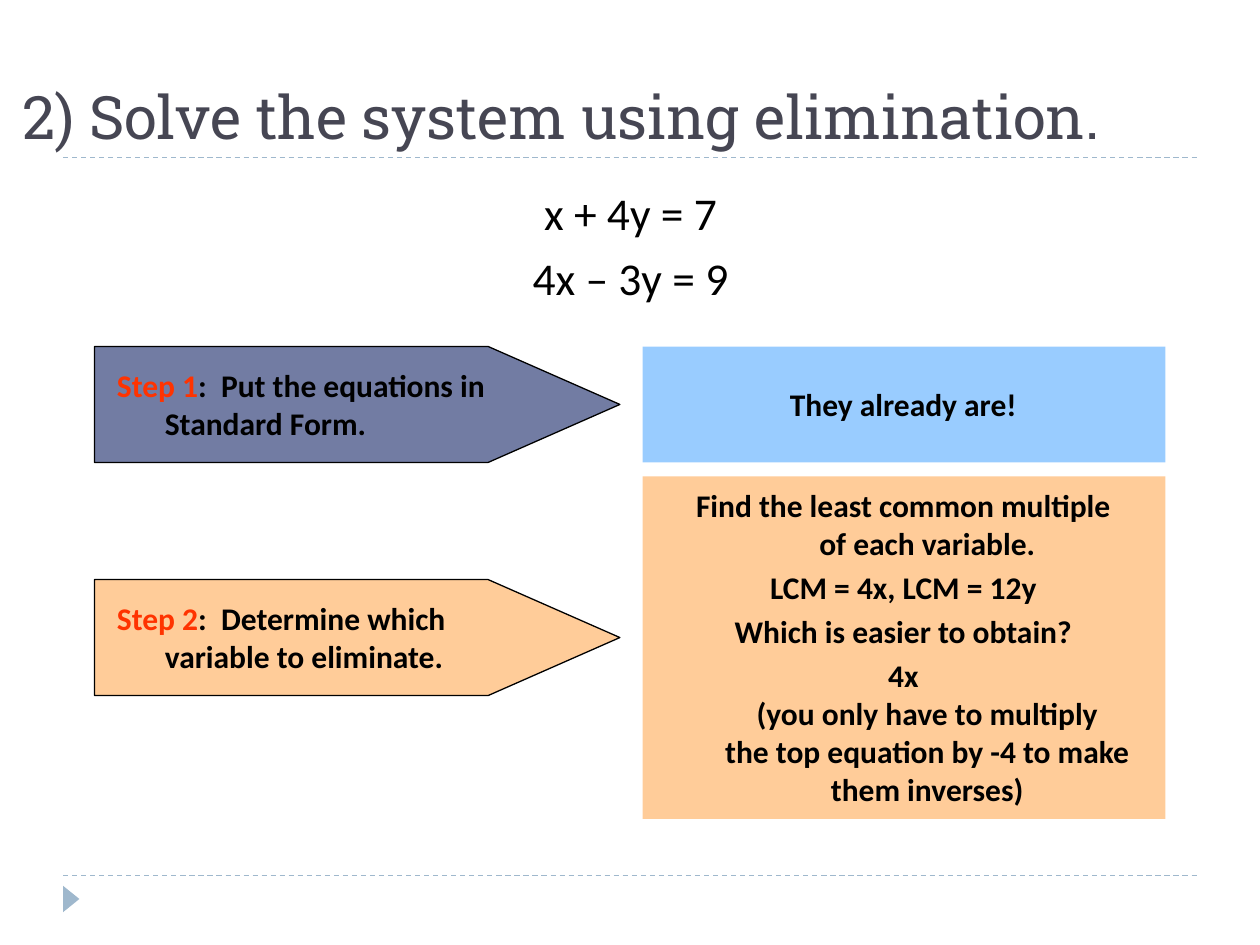
from lxml import etree
from pptx import Presentation
from pptx.dml.color import RGBColor
from pptx.enum.dml import MSO_LINE
from pptx.enum.shapes import MSO_CONNECTOR, MSO_SHAPE
from pptx.enum.text import MSO_ANCHOR, MSO_AUTO_SIZE, PP_ALIGN
from pptx.oxml.ns import qn
from pptx.util import Pt

PX = 9144
STRAIGHT = MSO_CONNECTOR.STRAIGHT
DASH = MSO_LINE.DASH
ARROW, RECTANGLE = MSO_SHAPE.PENTAGON, MSO_SHAPE.RECTANGLE
TRIANGLE = MSO_SHAPE.ISOSCELES_TRIANGLE
LEFT, CENTER = PP_ALIGN.LEFT, PP_ALIGN.CENTER
MIDDLE, BOTTOM = MSO_ANCHOR.MIDDLE, MSO_ANCHOR.BOTTOM
NO_AUTOFIT = MSO_AUTO_SIZE.NONE
BODY_FONT, TITLE_FONT = "Calibri", "Roboto Slab"
COLORS = {
    "rule": "9FB8CD", "title": "464653", "text": "000000", "step": "FF3300",
    "slate": "727CA3", "blue": "99CCFF", "peach": "FFCC99",
}


def emu(*lengths):
    """Turn px lengths into EMU."""
    return [round(length * PX) for length in lengths]


def rgb(name):
    """Look up a named colour."""
    return RGBColor.from_string(COLORS[name])


def move(shape, box):
    """Place a shape in a px box."""
    shape.left, shape.top, shape.width, shape.height = emu(*box)


def add_run(paragraph, text, size, color="text", font=BODY_FONT, bold=False):
    """Add one formatted run."""
    run = paragraph.add_run()
    run.text = text
    run.font.name, run.font.size, run.font.bold = font, Pt(size), bold
    run.font.color.rgb = rgb(color)


def set_hanging(paragraph, indent):
    """Give a paragraph a hanging indent without a bullet."""
    properties = paragraph._p.get_or_add_pPr()
    margin = emu(indent)[0]
    properties.set("marL", str(margin))
    properties.set("indent", str(-margin))
    etree.SubElement(properties, qn("a:buNone"))


def next_paragraph(frame, index, align, space, indent):
    """Return the formatted paragraph at the next position."""
    paragraph = frame.add_paragraph() if index else frame.paragraphs[0]
    paragraph.alignment, paragraph.space_before = align, Pt(space)
    set_hanging(paragraph, indent)
    return paragraph


def add_panel(slide, kind, box, fill, outlined=False):
    """Add a flat filled shape."""
    shape = slide.shapes.add_shape(kind, *emu(*box))
    shape.shadow.inherit = False
    shape.fill.solid()
    shape.fill.fore_color.rgb = rgb(fill)
    if outlined:
        shape.line.color.rgb = rgb("text")
        shape.line.width = Pt(0.75)
    else:
        shape.line.fill.background()
    return shape


def add_label(slide, box, paragraphs, align):
    """Add bold text; each paragraph is a list of lines of (text, colour) runs."""
    frame = slide.shapes.add_textbox(*emu(*box)).text_frame
    frame.word_wrap, frame.vertical_anchor = True, MIDDLE
    for index, lines in enumerate(paragraphs):
        paragraph = next_paragraph(frame, index, align, 3.6, 38)
        for number, runs in enumerate(lines):
            if number:
                paragraph.add_line_break()
            for text, color in runs:
                add_run(paragraph, text, 18, color, bold=True)


def add_rule(slide, left, top, width):
    """Add a dashed horizontal rule."""
    line = slide.shapes.add_connector(STRAIGHT, *emu(left, top, left + width, top))
    line.line.color.rgb = rgb("rule")
    line.line.width, line.line.dash_style = Pt(0.75), DASH
    etree.SubElement(line._element.spPr, qn("a:effectLst"))


def add_frame(slide, left, width):
    """Add the two rules and the footer marker."""
    for top in (695, 125):
        add_rule(slide, left, top, width)
    add_panel(slide, TRIANGLE, (left - 4, 707, 21, 13), "rule").rotation = 90


def fill_title(title, box, text):
    """Place and fill the title placeholder."""
    move(title, box)
    frame = title.text_frame
    frame.auto_size, frame.vertical_anchor = NO_AUTOFIT, BOTTOM
    frame.paragraphs[0].alignment = LEFT
    add_run(frame.paragraphs[0], text, 34.2, "title", TITLE_FONT)


def fill_equations(body, box, equations):
    """Place and fill the body placeholder with centred equations."""
    move(body, box)
    body.text_frame.auto_size = NO_AUTOFIT
    for index, equation in enumerate(equations):
        paragraph = next_paragraph(body.text_frame, index, CENTER, 6, 30)
        add_run(paragraph, equation, 26)


def add_step(slide, box, fill, name, instruction):
    """Add a step arrow with its label."""
    left, top, width, height = box
    add_panel(slide, ARROW, box, fill, True).adjustments[0] = 1.136
    runs = [(name, "step"), (f":  {instruction}", "text")]
    add_label(slide, (left + 8, top + 8, width - 59, height - 17), [[runs]], LEFT)


def add_answer(slide, box, fill, paragraphs):
    """Add an answer panel with centred lines."""
    left, top, width, height = box
    add_panel(slide, RECTANGLE, box, fill)
    content = [[[(line, "text")] for line in lines] for lines in paragraphs]
    add_label(slide, (left + 7, top + 8, width - 15, height - 17), content, CENTER)


def main():
    """Build and save the slide."""
    presentation = Presentation()
    presentation.slide_width, presentation.slide_height = emu(1000, 750)
    slide = presentation.slides.add_slide(presentation.slide_layouts[1])
    add_frame(slide, 50, 900)
    fill_title(slide.shapes.title, (8, 25, 908, 100),
               "2) Solve the system using elimination.")
    fill_equations(slide.placeholders[1], (67, 142, 867, 508),
                   ["x + 4y = 7", "4x – 3y = 9"])
    add_step(slide, (75, 275, 417, 92), "slate", "Step 1",
             "Put the equations in Standard Form.")
    add_answer(slide, (510, 275, 415, 92), "blue", [["They already are!"]])
    add_step(slide, (75, 460, 417, 92), "peach", "Step 2",
             "Determine which variable to eliminate.")
    add_answer(slide, (510, 378, 415, 272), "peach", [
        ["Find the least common multiple", "of each variable."],
        ["LCM = 4x, LCM = 12y"],
        ["Which is easier to obtain?"],
        ["4x", "(you only have to multiply",
         "the top equation by -4 to make them inverses)"],
    ])
    presentation.save("out.pptx")


if __name__ == "__main__":
    main()
